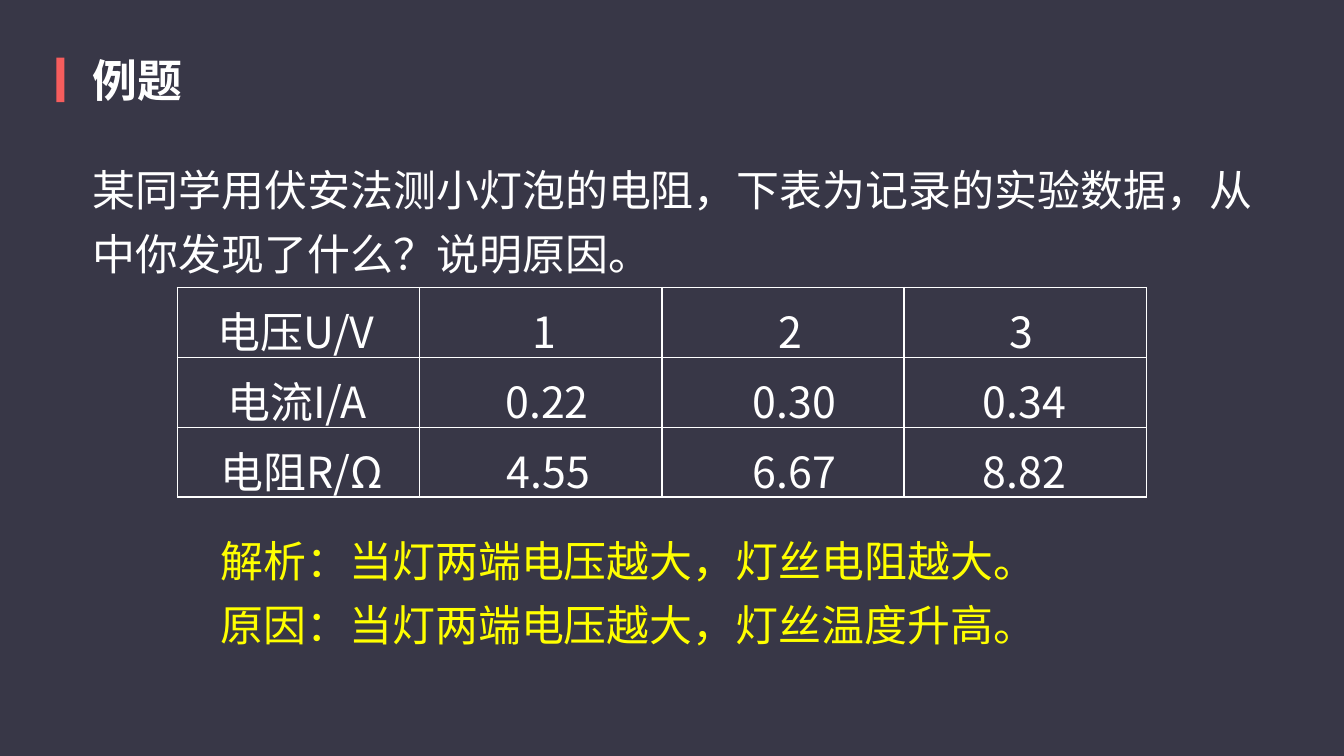
from dataclasses import dataclass

from lxml import etree
from pptx import Presentation
from pptx.dml.color import RGBColor
from pptx.enum.shapes import MSO_SHAPE
from pptx.enum.text import MSO_ANCHOR, MSO_AUTO_SIZE
from pptx.oxml.ns import qn
from pptx.util import Inches, Pt

RECTANGLE = MSO_SHAPE.RECTANGLE
TOP = MSO_ANCHOR.TOP
GROW = MSO_AUTO_SIZE.SHAPE_TO_FIT_TEXT


@dataclass(frozen=True)
class Theme:
    background: str = "383747"
    accent: str = "F65D5D"
    text: str = "FFFFFF"
    answer: str = "FFFF00"
    font: str = "Noto Sans CJK SC"
    title_size: int = 24
    body_size: int = 23
    border_width: int = 1
    line_spacing: float = 1.25


# Widescreen slide, 16 to 9
theme = Theme()
presentation = Presentation()
presentation.slide_width = Inches(10)
presentation.slide_height = Inches(10) * 9 // 16
slide = presentation.slides.add_slide(presentation.slide_layouts[6])
slide.background.fill.solid()
slide.background.fill.fore_color.rgb = RGBColor.from_string(theme.background)


def add_text(text, *, left, top, width, size=theme.body_size, color=theme.text, bold=False):
    """Add a text box with one paragraph for each line of the text."""
    lines = text.split("\n")
    box = slide.shapes.add_textbox(
        Inches(left), Inches(top), Inches(width), Inches(0.58 * len(lines)))
    frame = box.text_frame
    frame.word_wrap = True
    frame.auto_size = GROW
    frame.vertical_anchor = TOP
    frame.margin_left = frame.margin_right = frame.margin_top = frame.margin_bottom = 0
    for index, line in enumerate(lines):
        paragraph = frame.paragraphs[0] if index == 0 else frame.add_paragraph()
        paragraph.line_spacing = theme.line_spacing
        run = paragraph.add_run()
        run.text = line
        run.font.size = Pt(size)
        run.font.bold = bold
        run.font.name = theme.font
        run.font.color.rgb = RGBColor.from_string(color)
        etree.SubElement(run.font._element, qn("a:ea"), typeface=theme.font)


def add_borders(cell):
    """Draw a solid line on the four sides of a table cell."""
    properties = cell._tc.get_or_add_tcPr()
    for side in ("a:lnL", "a:lnR", "a:lnT", "a:lnB"):
        line = etree.SubElement(properties, qn(side), w=str(Pt(theme.border_width)))
        fill = etree.SubElement(line, qn("a:solidFill"))
        etree.SubElement(fill, qn("a:srgbClr"), val=theme.text)


# Title with accent bar
bar = slide.shapes.add_shape(RECTANGLE, Inches(0.42), Inches(0.43), Inches(0.06), Inches(0.33))
bar.shadow.inherit = False
bar.fill.solid()
bar.fill.fore_color.rgb = RGBColor.from_string(theme.accent)
bar.line.fill.background()
add_text("例题", left=0.69, top=0.29, width=9.3, size=theme.title_size, bold=True)

# Question
add_text("某同学用伏安法测小灯泡的电阻，下表为记录的实验数据，从中你发现了什么？说明原因。",
         left=0.69, top=1.12, width=8.7)

# Table grid
row_height = 0.52
table_top = 2.14
table = slide.shapes.add_table(
    3, 4, Inches(1.32), Inches(table_top), Inches(7.21), Inches(3 * row_height)).table
table.first_row = False
table.horz_banding = False
for cell in table.iter_cells():
    add_borders(cell)
    cell.fill.background()

# Measurements laid over the grid, each with its left edge
measurements = [
    [("电压U/V", 1.62), ("1", 3.96), ("2", 5.79), ("3", 7.51)],
    [("电流I/A", 1.69), ("0.22", 3.76), ("0.30", 5.6), ("0.34", 7.31)],
    [("电阻R/Ω", 1.64), ("4.55", 3.77), ("6.67", 5.6), ("8.82", 7.31)],
]
right_edge = 9.99
for row_index, entries in enumerate(measurements):
    for text, left in entries:
        add_text(text, left=left, top=table_top + 0.04 + row_index * row_height,
                 width=right_edge - left)

# Analysis and reason
add_text("解析：当灯两端电压越大，灯丝电阻越大。\n原因：当灯两端电压越大，灯丝温度升高。",
         left=1.64, top=3.88, width=8.35, color=theme.answer)

presentation.save("out.pptx")
